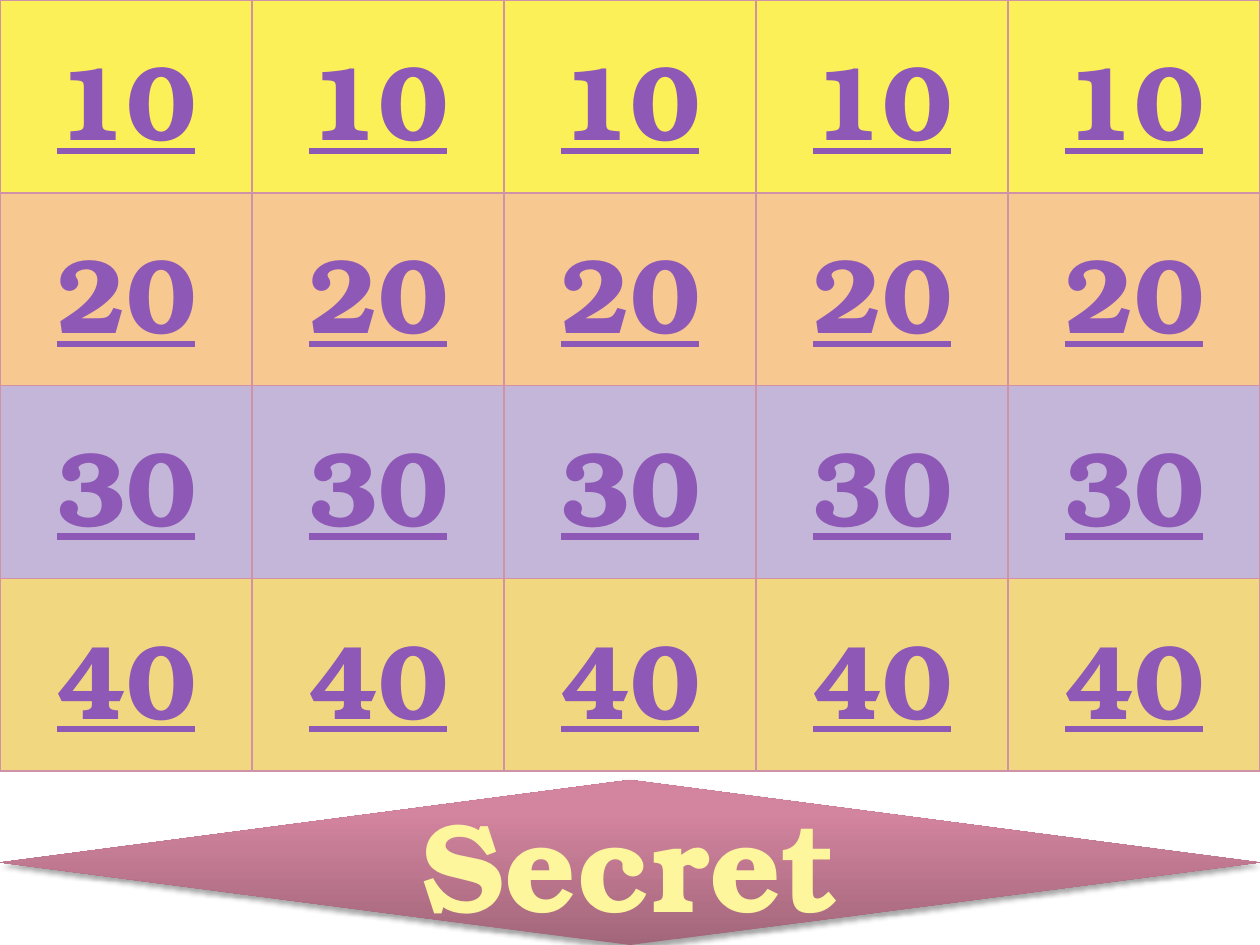
import pptx
import pptx.dml.color
import pptx.enum.shapes
import pptx.enum.text
import pptx.oxml
import pptx.oxml.ns
import pptx.util
from pptx.util import Inches

FONT = "TeX Gyre Bonum"
NAMESPACE = pptx.oxml.ns.nsdecls("a")
COLUMN_COUNT = 5
ROW_HEIGHT = 1.53
ROWS = [("10", "FCF059"), ("20", "F8C891"), ("30", "C4B6D9"), ("40", "F1D77F")]
BORDER_COLOR = "D092A7"
POINTS_FORMAT = {"size": pptx.util.Pt(60), "name": FONT, "bold": True, "underline": True}
SECRET_FORMAT = {"size": pptx.util.Pt(72), "name": FONT, "bold": True}
GRADIENT = [(0, "A2667A"), (80, "D3849F"), (100, "D5849F")]


def color(value):
    """Return the colour for a hex string."""
    return pptx.dml.color.RGBColor.from_string(value)


def write_text(text_frame, text, text_format, text_color):
    """Write one centred, formatted paragraph."""
    paragraph = text_frame.paragraphs[0]
    paragraph.alignment = pptx.enum.text.PP_ALIGN.CENTER
    run = paragraph.add_run()
    run.text = text
    for name, value in text_format.items():
        setattr(run.font, name, value)
    run.font.color.rgb = color(text_color)


def add_borders(cell):
    """Draw a thin line on all four sides of a table cell."""
    properties = cell._tc.get_or_add_tcPr()
    for side in ("lnL", "lnR", "lnT", "lnB"):
        properties.append(pptx.oxml.parse_xml(
            f'<a:{side} {NAMESPACE} w="{pptx.util.Pt(1)}"><a:solidFill>'
            f'<a:srgbClr val="{BORDER_COLOR}"/></a:solidFill></a:{side}>'))


def add_points_table(slide):
    """Add the board of point values, one colour for each row."""
    table = slide.shapes.add_table(
        len(ROWS), COLUMN_COUNT, Inches(0), Inches(0),
        Inches(10), Inches(ROW_HEIGHT * len(ROWS))).table
    for row, (points, fill_color) in zip(table.rows, ROWS):
        row.height = Inches(ROW_HEIGHT)
        for cell in row.cells:
            add_borders(cell)
            cell.fill.solid()
            cell.fill.fore_color.rgb = color(fill_color)
            cell.vertical_anchor = pptx.enum.text.MSO_ANCHOR.MIDDLE
            write_text(cell.text_frame, points, POINTS_FORMAT, "8E58B6")


def fill_gradient(shape, stops):
    """Fill a shape with a gradient that runs from bottom to top."""
    shape.fill.gradient()
    shape.fill.gradient_angle = 90
    stop_list = shape._element.spPr.find(".//" + pptx.oxml.ns.qn("a:gsLst"))
    stop_list.clear()
    for position, value in stops:
        stop_list.append(pptx.oxml.parse_xml(
            f'<a:gs {NAMESPACE} pos="{position * 1000}"><a:srgbClr val="{value}"/></a:gs>'))


def add_shadow(shape):
    """Give a shape a soft shadow straight below it."""
    shape.shadow.inherit = False
    effects = shape._element.spPr.find(pptx.oxml.ns.qn("a:effectLst"))
    effects.append(pptx.oxml.parse_xml(
        f'<a:outerShdw {NAMESPACE} blurRad="{pptx.util.Pt(3.1)}" dist="{pptx.util.Pt(1.8)}" '
        'dir="5400000" rotWithShape="0"><a:srgbClr val="000000">'
        '<a:alpha val="35000"/></a:srgbClr></a:outerShdw>'))


def add_secret_diamond(slide):
    """Add the wide diamond below the board."""
    shape = slide.shapes.add_shape(
        pptx.enum.shapes.MSO_SHAPE.FLOWCHART_DECISION,
        Inches(0), Inches(6.19), Inches(10), Inches(1.31))
    fill_gradient(shape, GRADIENT)
    shape.line.fill.background()
    add_shadow(shape)
    shape.text_frame.vertical_anchor = pptx.enum.text.MSO_ANCHOR.MIDDLE
    write_text(shape.text_frame, "Secret", SECRET_FORMAT, "FDF69C")


def main():
    """Build the quiz board slide and save it."""
    presentation = pptx.Presentation()
    presentation.slide_width = Inches(10)
    presentation.slide_height = Inches(7.5)
    slide = presentation.slides.add_slide(presentation.slide_layouts[6])
    add_points_table(slide)
    add_secret_diamond(slide)
    presentation.save("out.pptx")


if __name__ == "__main__":
    main()
